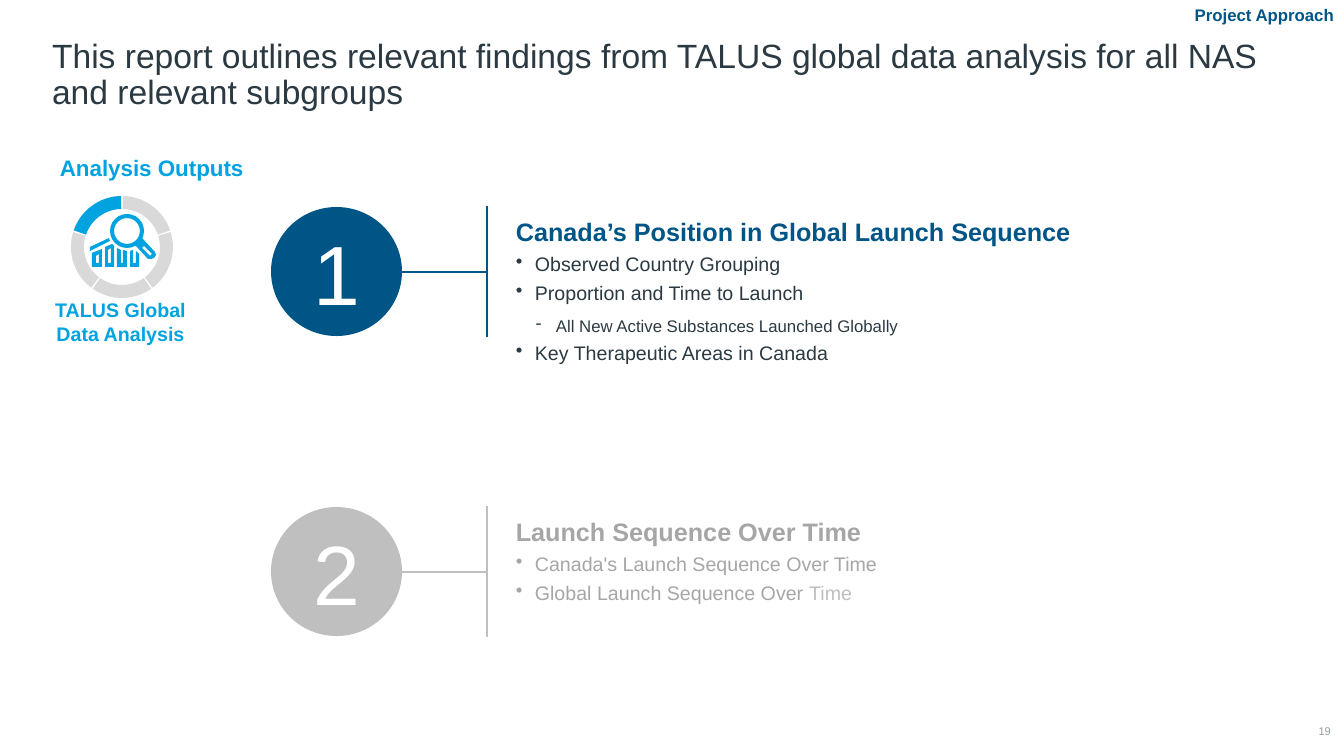
import math

import pptx
import pptx.dml.color
import pptx.enum.shapes
import pptx.enum.text
import pptx.util
from lxml import etree

PX = 12192000 / 1344
FONT = "Arial"
NAVY, SKY, INK = "005587", "00A3E0", "2B3A42"
SILVER, GREY, PALE, WHITE, SLATE = "BFBFBF", "A6A6A6", "D9D9D9", "FFFFFF", "959CA0"
SHAPES = pptx.enum.shapes.MSO_SHAPE
ALIGN = pptx.enum.text.PP_ALIGN
ANCHOR = pptx.enum.text.MSO_ANCHOR

BULLET = {"char": "•", "margin": 19, "level": 0, "before": 4, "size": 14}
DASH = {"char": "-", "margin": 40, "level": 1, "before": 8, "size": 12}

# Chart and magnifier contours, in px from the icon's corner
GLYPHS = [
    [[(21, 57), (31, 53), (31, 71), (21, 71)], [(25, 60), (28, 58), (28, 67), (25, 67)]],
    [[(34, 51), (41, 48), (43, 50), (43, 71), (34, 71)],
     [(37, 54), (40, 52), (40, 67), (37, 67)]],
    [[(46, 52), (50, 54), (50, 67), (52, 67), (52, 54), (56, 55), (56, 71), (46, 71)]],
    [[(59, 55), (62, 54), (62, 67), (65, 67), (65, 55), (68, 58), (68, 71), (59, 71)]],
    [[(19, 55), (39, 45), (38, 42), (19, 51)]],
    [[(71, 42), (84, 56), (85, 59), (83, 62), (80, 63), (77, 63), (64, 49), (68, 47)],
     [(71, 52), (73, 50), (81, 58), (79, 60)]],
]


def emu(px):
    return round(px * PX)


def rgb(value):
    return pptx.dml.color.RGBColor.from_string(value)


def apply(target, values):
    for name, value in values.items():
        setattr(target, name, value)


def add_span(para, text, size, color, bold=False):
    span = para.add_run()
    span.text = text
    apply(span.font, {"name": FONT, "size": pptx.util.Pt(size), "bold": bold})
    span.font.color.rgb = rgb(color)


def add_text(page, box, text, size, color, bold=False, align=ALIGN.LEFT, **frame_values):
    frame = page.shapes.add_textbox(*map(emu, box)).text_frame
    apply(frame, {"word_wrap": True, **frame_values})
    para = frame.paragraphs[0]
    para.alignment = align
    add_span(para, text, size, color, bold)
    return frame


def paint(shape, color):
    shape.shadow.inherit = False
    shape.fill.solid()
    shape.fill.fore_color.rgb = rgb(color)
    shape.line.fill.background()


def add_outline(page, contours, color):
    """Fill a freeform whose later contours are holes in the first."""
    scaled = [[(emu(x), emu(y)) for x, y in contour] for contour in contours]
    builder = page.shapes.build_freeform(*scaled[0][0])
    for contour in scaled:
        builder.move_to(*contour[0])
        builder.add_line_segments(contour[1:], close=True)
    paint(builder.convert_to_shape(), color)


def add_line(page, start, end, color):
    line = page.shapes.add_connector(
        pptx.enum.shapes.MSO_CONNECTOR.STRAIGHT, *map(emu, (*start, *end)))
    line.line.color.rgb = rgb(color)
    line.line.width = pptx.util.Pt(1.5)
    properties = line._element.spPr
    etree.SubElement(properties, pptx.oxml.ns.qn("a:effectLst"))


def add_bullet(para, style):
    para.level = style["level"]
    para.space_before = pptx.util.Pt(style["before"])
    properties = para._p.get_or_add_pPr()
    properties.set("marL", str(emu(style["margin"])))
    properties.set("indent", str(-emu(20 if style["level"] else 19)))
    mark = etree.SubElement(properties, pptx.oxml.ns.qn("a:buChar"))
    mark.set("char", style["char"])


def add_heading(page, box, text):
    title = page.shapes.title
    left, top, width, height = map(emu, box)
    apply(title, {"left": left, "top": top, "width": width, "height": height})
    frame = title.text_frame
    apply(frame, {"word_wrap": True, "vertical_anchor": ANCHOR.BOTTOM,
                  "auto_size": pptx.enum.text.MSO_AUTO_SIZE.NONE})
    para = frame.paragraphs[0]
    apply(para, {"alignment": ALIGN.LEFT, "line_spacing": 0.9})
    add_span(para, text, 24, INK)


def add_icon(page, box):
    """Draw a five-part ring around a bar chart and magnifier."""
    left, top, width, height = box
    center_x, center_y = left + width / 2, top + height / 2
    sweep, steps = 72, 18

    def arc(radius, first, last):
        angles = [math.radians(first + (last - first) * i / steps) for i in range(steps + 1)]
        return [(center_x + radius * math.cos(a), center_y + radius * math.sin(a))
                for a in angles]

    for part in range(5):
        first, last = -90 + sweep * part + 1, -90 + sweep * (part + 1) - 1
        ring = arc(width / 2, first, last) + arc(width / 2 - 13, last, first)
        add_outline(page, [ring], SKY if part == 4 else PALE)
    for contours in GLYPHS:
        add_outline(page, [[(left + x, top + y) for x, y in contour]
                           for contour in contours], SKY)
    lens = page.shapes.add_shape(
        SHAPES.DONUT, *map(emu, (left + 39, top + 18, 34, 34)))
    lens.adjustments[0] = 0.12
    paint(lens, SKY)


def add_output(page, box, number, color, heading, heading_color, points):
    """Place a numbered disc, its bracket and its list of points."""
    left, top, width, height = box
    disc_width, bracket, middle = 131, left + 216, top + 66
    disc = page.shapes.add_shape(
        SHAPES.OVAL, *map(emu, (left, top + 1, disc_width, 129)))
    paint(disc, color)
    frame = disc.text_frame
    apply(frame, {"margin_left": 0, "margin_right": 0, "margin_top": 0,
                  "margin_bottom": 0, "vertical_anchor": ANCHOR.MIDDLE})
    frame.paragraphs[0].alignment = ALIGN.CENTER
    add_span(frame.paragraphs[0], number, 60, WHITE)

    add_line(page, (bracket, top), (bracket, top + 131), color)
    add_line(page, (left + disc_width, middle), (bracket, middle), color)

    frame = add_text(page, (left + 235, top + 5, width - 235, height - 5),
                     heading, 18, heading_color, True)
    for style, spans in points:
        para = frame.add_paragraph()
        add_bullet(para, style)
        for text, span_color in spans:
            add_span(para, text, style["size"], span_color)


def main():
    deck = pptx.Presentation()
    apply(deck, {"slide_width": emu(1344), "slide_height": emu(756)})
    page = deck.slides.add_slide(deck.slide_layouts.get_by_name("Title Only"))

    add_heading(page, (42, 32, 1250, 85),
                "This report outlines relevant findings from TALUS global data "
                "analysis for all NAS and relevant subgroups")
    add_text(page, (1183, 0, 161, 30), "Project Approach", 12, NAVY, True,
             ALIGN.RIGHT, word_wrap=False)
    add_text(page, (50, 149, 254, 37), "Analysis Outputs", 16, SKY, True)
    add_icon(page, (71, 196, 102, 102))
    add_text(page, (29, 293, 183, 57), "TALUS Global Data Analysis", 14, SKY, True,
             ALIGN.CENTER)
    add_output(page, (271, 206, 956, 289), "1", NAVY,
               "Canada’s Position in Global Launch Sequence", NAVY, [
                   (BULLET, [("Observed Country Grouping", INK)]),
                   (BULLET, [("Proportion and Time to Launch", INK)]),
                   (DASH, [("All New Active Substances Launched Globally", INK)]),
                   (BULLET, [("Key Therapeutic Areas in Canada", INK)])])
    add_output(page, (271, 506, 781, 135), "2", SILVER,
               "Launch Sequence Over Time", GREY, [
                   (BULLET, [("Canada's Launch Sequence Over Time", GREY)]),
                   (BULLET, [("Global Launch Sequence Over ", GREY), ("Time", SILVER)])])
    add_text(page, (1292, 722, 39, 19), "19", 8, SLATE, False, ALIGN.RIGHT,
             margin_left=0, margin_right=0, margin_top=0, margin_bottom=0,
             vertical_anchor=ANCHOR.MIDDLE)
    deck.save("out.pptx")


if __name__ == "__main__":
    main()
